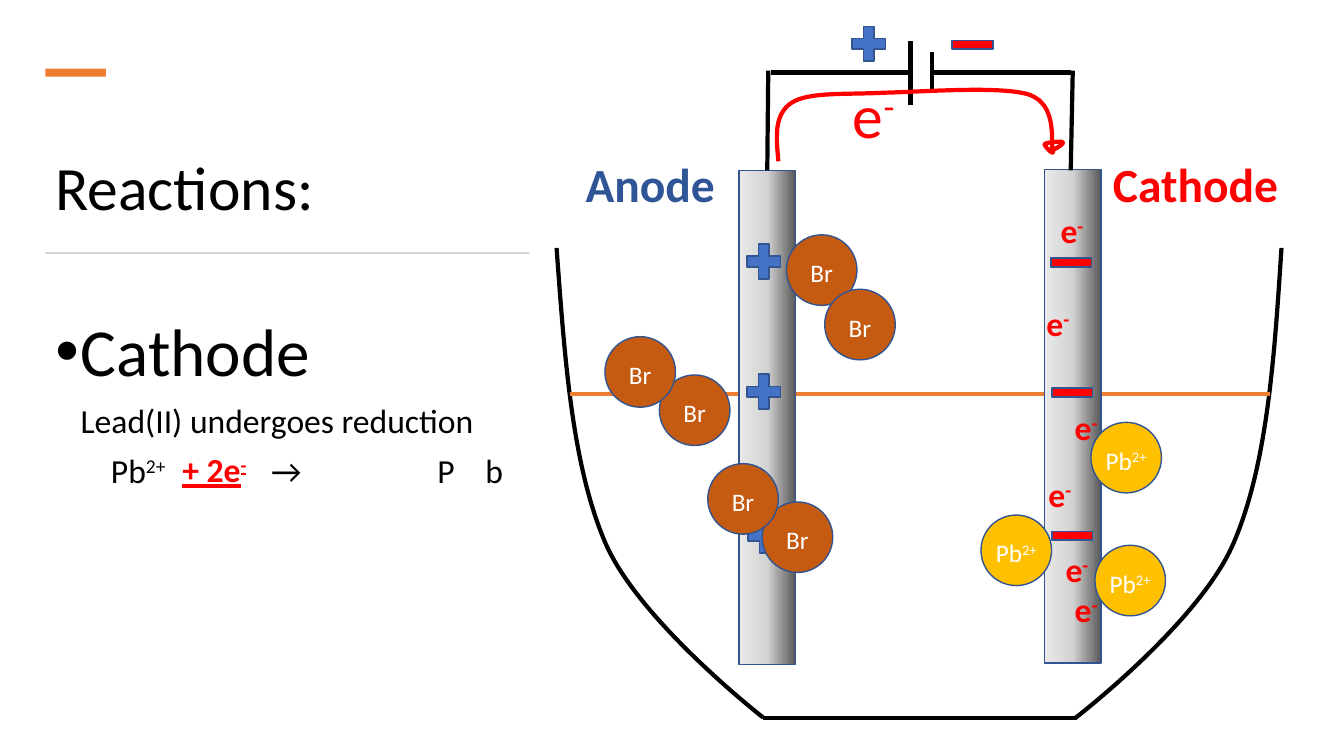
from copy import deepcopy
from pptx import Presentation
from pptx.dml.color import RGBColor
from pptx.enum.shapes import MSO_CONNECTOR, MSO_SHAPE
from pptx.enum.text import MSO_ANCHOR, MSO_AUTO_SIZE, PP_ALIGN
from pptx.oxml import parse_xml
from pptx.oxml.ns import nsdecls, qn
from pptx.util import Pt

PX = 9144
LINE = MSO_CONNECTOR.STRAIGHT
RECT, OVAL = MSO_SHAPE.RECTANGLE, MSO_SHAPE.OVAL
PLUS, MINUS = MSO_SHAPE.MATH_PLUS, MSO_SHAPE.MATH_MINUS
TOP, MID, LOW = MSO_ANCHOR.TOP, MSO_ANCHOR.MIDDLE, MSO_ANCHOR.BOTTOM
LEFT, MIDST = PP_ALIGN.LEFT, PP_ALIGN.CENTER
FIXED = MSO_AUTO_SIZE.NONE

BLACK, WHITE, RED, ORANGE = "000000", "FFFFFF", "FF0000", "ED7D31"
BLUE, EDGE, BROWN, GOLD = "4472C4", "325491", "C55A11", "FFC000"
METAL = [(0, "595959"), (0.5, "D3D3D3"), (1, "E9E9E9")]

TITLE = [("Reactions:", {})]
HEAD = [("Cathode", {})]
NOTE = [("Lead(II) undergoes reduction", {})]
SUPER = {"baseline": 30000}
LEAD = [("Pb", {}), ("2+", SUPER)]
YIELD = [(" →", {"spc": 7000}), (" P", {"spc": 2170}), ("b", {})]
GAIN = [("+ 2e", {}), ("-", SUPER)]
ELEC = [("e", {}), ("-", SUPER)]
ATOM = [("Br", {})]
POLES = [("Anode", "2F5597", 571, 149), ("Cathode", RED, 1094, 192)]
ROWS = [(HEAD, 48, 1.1, 25, -25, '<a:buChar {} char="•"/>'),
        (NOTE, 24, 0.9, 25, 0, "<a:buNone {}/>"),
        (LEAD + YIELD, 24, 0.9, 0, 55, "<a:buNone {}/>")]

BARS = [((45, 68, 60, 8), ORANGE), ((45, 250, 480, 2), "D5D5D5")]
BOWL = [
    [(552, 246), (560, 354), (567, 462), (601, 540), (635, 617), (757, 712), (757, 712)],
    [(1271, 246), (1264, 354), (1257, 462), (1223, 540), (1189, 618), (1067, 712), (1067, 712)],
]
BASE = (757, 712, 1068, 712)
LEVEL = (565, 391, 1260, 391)
RODS = [(733, 169, 56, 490), (1036, 168, 56, 490)]
WIRES = [
    (761, 169, 762, 70), (1062, 169, 1064, 70), (765, 72, 903, 72),
    (924, 72, 1062, 72), (903, 41, 903, 104), (924, 52, 924, 89),
]
SIGNS = [(839, 20, 937, 26), (735, 236, 1035, 242),
         (735, 365, 1036, 371), (736, 508, 1036, 513)]
FLOW = [
    (772, 160), (770, 137), (767, 114), (785, 102), (802, 91), (838, 94), (877, 92),
    (917, 91), (994, 85), (1021, 94), (1049, 104), (1042, 141), (1044, 149),
    (1047, 157), (1035, 144), (1036, 143), (1038, 141), (1053, 140), (1054, 141),
    (1056, 142), (1050, 146), (1044, 149),
]
IONS = [(1086, 541), (973, 511), (1082, 419)]
PAIRS = [[(654, 372), (600, 334)], [(780, 233), (818, 287)], [(756, 498), (702, 460)]]
SPOTS = [(1028, 303, 0.8), (1056, 587, 0.8), (1030, 470, 0.9),
         (1056, 407, 0.8), (1042, 211, 0.8), (1047, 544, 0.9)]
SMALL = {"size": Pt(24), "bold": True}

deck = Presentation()
deck.slide_width, deck.slide_height = 1333 * PX, 750 * PX
slide = deck.slides.add_slide(deck.slide_layouts[1])
shapes = slide.shapes


def tint(code):
    return RGBColor.from_string(code)


def scale(box):
    return [v * PX for v in box]


def put(thing, vals):
    for name, val in vals.items():
        setattr(thing, name, val)


def write(para, runs, font, color, form):
    put(para, form)
    for text, marks in runs:
        run = para.add_run()
        run.text = text
        put(run.font, {"name": "Calibri", **font})
        run.font.color.rgb = tint(color)
        for name, val in marks.items():
            run._r.get_or_add_rPr().set(name, str(val))


def frame(shape, anchor, **form):
    text = shape.text_frame
    put(text, {"word_wrap": True, "auto_size": FIXED, "vertical_anchor": anchor, **form})
    return text


def label(box, runs, font, color, form, **edge):
    text = frame(shapes.add_textbox(*scale(box)), TOP, **edge)
    write(text.paragraphs[0], runs, font, color, form)


def draw(kind, box, fill, edge=EDGE):
    shape = shapes.add_shape(kind, *scale(box))
    shape.shadow.inherit = False
    if fill:
        shape.fill.solid()
        shape.fill.fore_color.rgb = tint(fill)
    if edge:
        shape.line.color.rgb = tint(edge)
        shape.line.width = Pt(1)
    else:
        shape.line.fill.background()
    return shape


def wire(ends, color=BLACK):
    line = shapes.add_connector(LINE, *scale(ends))
    line.line.color.rgb = tint(color)
    line.line.width = Pt(3)
    line._element.spPr.append(parse_xml(f"<a:effectLst {nsdecls('a')}/>"))


def curve(knots, color):
    pen = shapes.build_freeform(*scale(knots[0]), scale=1.0)
    pen.add_line_segments([scale(p) for p in knots[1:]], close=False)
    shape = pen.convert_to_shape()
    shape.shadow.inherit = False
    shape.fill.background()
    shape.line.color.rgb = tint(color)
    shape.line.width = Pt(3)
    track = shape._element.spPr.find(".//" + qn("a:path"))
    steps = track.findall(qn("a:lnTo"))
    for i in range(0, len(steps), 3):
        bend = parse_xml(f"<a:cubicBezTo {nsdecls('a')}/>")
        for step in steps[i:i + 3]:
            bend.append(step[0])
            track.remove(step)
        track.append(bend)


def rod(box):
    shape = draw(RECT, box, None)
    shape.fill.gradient()
    shape.fill.gradient_angle = 180
    stops = shape._element.spPr.find(".//" + qn("a:gsLst"))
    stops.append(deepcopy(stops[0]))
    for stop, (place, color) in zip(shape.fill.gradient_stops, METAL):
        stop.position = place
        stop.color.rgb = tint(color)


def ball(x, y, fill, runs):
    shape = draw(OVAL, (x, y, 70, 70), fill)
    text = frame(shape, MID, margin_left=0, margin_right=0, margin_top=5 * PX, margin_bottom=0)
    write(text.paragraphs[0], runs, {"size": Pt(18)}, WHITE, {"alignment": MIDST})


def place(shape, box):
    put(shape, dict(zip(("left", "top", "width", "height"), scale(box))))


for box, color in BARS:
    draw(RECT, box, color, None)
for side in BOWL:
    curve(side, BLACK)
wire(BASE)
wire(LEVEL, ORANGE)
for box in RODS:
    rod(box)
for ends in WIRES:
    wire(ends)
for px, py, mx, my in SIGNS:
    draw(PLUS, (px, py, 45, 47), BLUE)
    draw(MINUS, (mx, my, 55, 37), RED)
for x, y in IONS:
    ball(x, y, GOLD, LEAD)

title, body = shapes.title, slide.placeholders[1]
place(title, (45, 108, 486, 119))
write(frame(title, LOW).paragraphs[0], TITLE, {"size": Pt(44)}, BLACK,
      {"alignment": LEFT, "line_spacing": 0.9})
place(body, (45, 294, 538, 382))
text = frame(body, TOP)
for i, (runs, size, gap, left, first, mark) in enumerate(ROWS):
    para = text.add_paragraph() if i else text.paragraphs[0]
    write(para, runs, {"size": Pt(size)}, BLACK, {"line_spacing": gap, "space_before": Pt(10)})
    props = para._p.get_or_add_pPr()
    props.set("marL", str(left * PX))
    props.set("indent", str(first * PX))
    props.append(parse_xml(mark.format(nsdecls("a"))))

for name, color, x, wide in POLES:
    label((x, 149, wide, 67), [(name, {})], {"size": Pt(34), "bold": True}, color, {})
label((171, 445, 135, 58), GAIN, {**SMALL, "underline": True}, RED,
      {"line_spacing": 0.9, "space_before": Pt(10)})
curve(FLOW, RED)
label((846, 76, 46, 74), ELEC, {"size": Pt(44)}, RED, {},
      margin_left=0, margin_right=0, margin_top=0, margin_bottom=0)
for x, y, gap in SPOTS:
    label((x, y, 48, 44), ELEC, SMALL, RED, {"line_spacing": gap, "space_before": Pt(10)})
for pair in PAIRS:
    for x, y in pair:
        ball(x, y, BROWN, ATOM)

deck.save("out.pptx")
